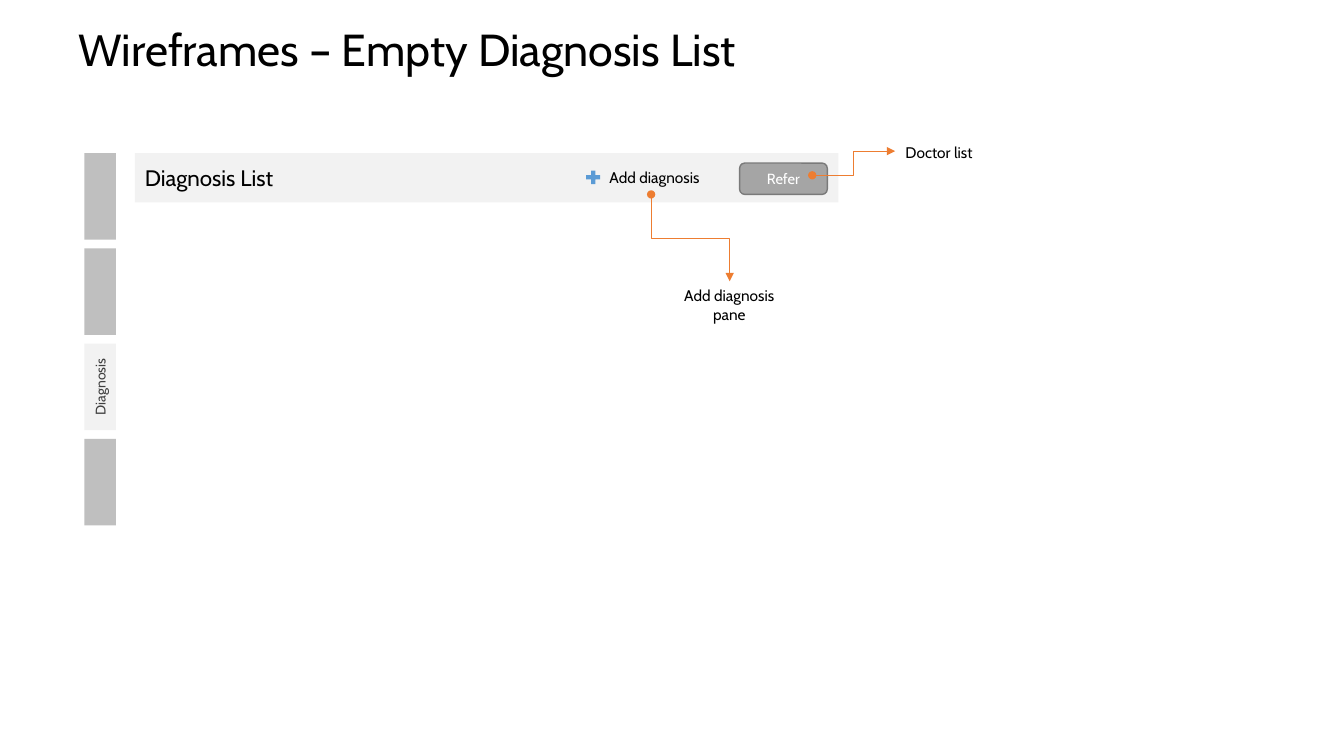
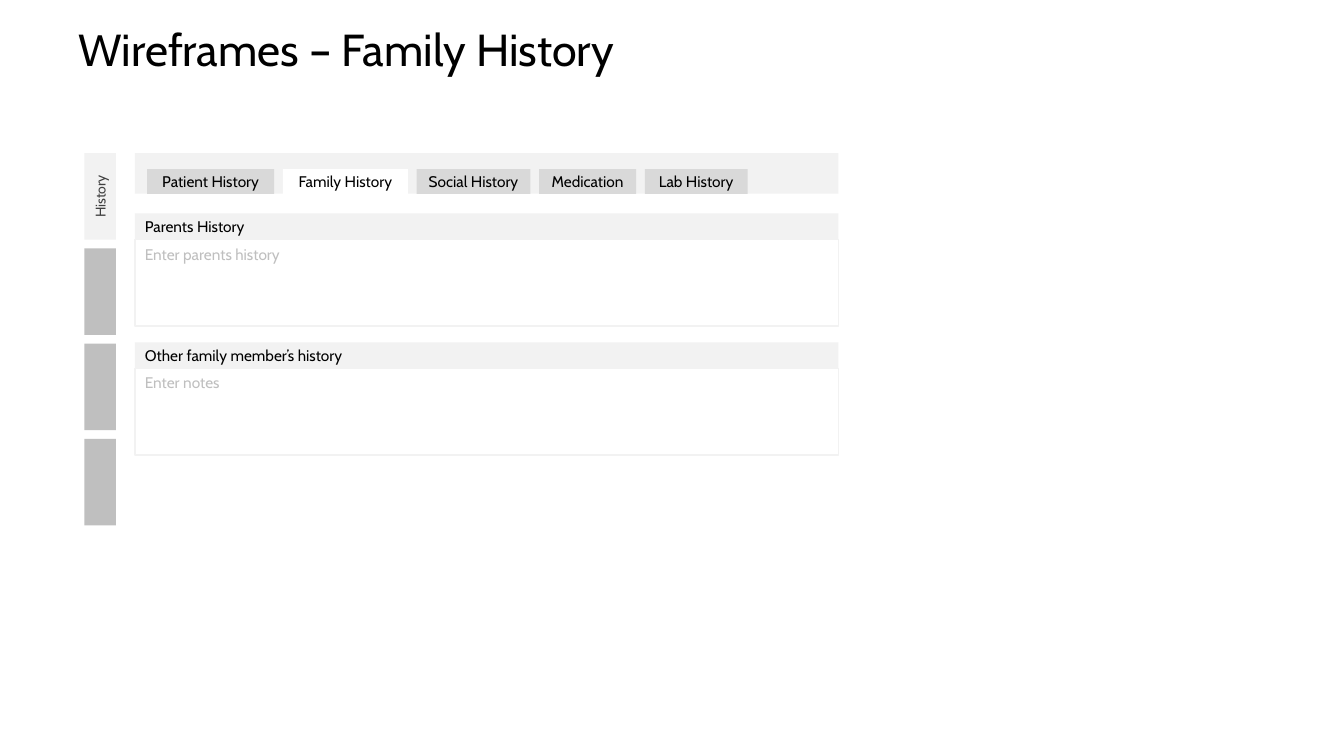
from dataclasses import dataclass
from typing import NamedTuple, Optional

from lxml import etree
from pptx import Presentation
from pptx.dml.color import RGBColor
from pptx.enum import shapes, text
from pptx.oxml import ns
from pptx.util import Cm, Pt

Kind = shapes.MSO_SHAPE
Align = text.PP_ALIGN
Anchor = text.MSO_ANCHOR


@dataclass(frozen=True)
class Theme:
    font: str = "Cabin"
    black: str = "000000"
    white: str = "FFFFFF"
    dark: str = "404040"
    edge: str = "7A7A7A"
    button: str = "A5A5A5"
    grey: str = "BFBFBF"
    tab: str = "D9D9D9"
    pale: str = "F2F2F2"
    blue: str = "5B9BD5"
    orange: str = "ED7D31"
    title: float = 32
    head: float = 16
    body: float = 11
    label: float = 10.5
    small: float = 10


class Box(NamedTuple):
    x: float
    y: float
    w: float
    h: float

    def cm(self) -> list:
        return [Cm(v) for v in self]


class Tab(NamedTuple):
    name: str
    width: float


class Panel(NamedTuple):
    name: str
    hint: str


THEME = Theme()
TITLE = Box(1.73, 0.43, 29.87, 2.46)
LEFT, TOP, WIDE = 3.4, 3.86, 17.73
RAIL = Box(2.13, TOP, 0.79, 2.18)
RAIL_STEP = 2.4
RAIL_COUNT = 4
TAB_GAP = 0.22
TABS = [
    Tab("Patient History", 3.2),
    Tab("Family History", 3.15),
    Tab("Social History", 2.87),
    Tab("Medication", 2.44),
    Tab("Lab History", 2.59),
]
PANEL_TOP, PANEL_STEP, HEAD, BODY = 5.38, 3.25, 0.66, 2.18
PANELS = [
    Panel("Parents History", "Enter parents history"),
    Panel("Other family member’s history", "Enter notes"),
]


def write(shape, words: str, *, size: float = THEME.body,
          color: str = THEME.black, align=Align.LEFT,
          anchor=Anchor.TOP, tight: bool = False) -> None:
    frame = shape.text_frame
    frame.word_wrap = True
    frame.vertical_anchor = anchor
    if tight:
        frame.margin_left = frame.margin_right = 0
    para = frame.paragraphs[0]
    para.alignment = align
    run = para.add_run()
    run.text = words
    run.font.name = THEME.font
    run.font.size = Pt(size)
    run.font.color.rgb = RGBColor.from_string(color)


def label(slide, box: Box, words: str, **style) -> None:
    write(slide.shapes.add_textbox(*box.cm()), words, **style)


def draw(slide, box: Box, fill: str, kind=Kind.RECTANGLE,
         line: Optional[str] = None):
    shape = slide.shapes.add_shape(kind, *box.cm())
    shape.shadow.inherit = False
    shape.fill.solid()
    shape.fill.fore_color.rgb = RGBColor.from_string(fill)
    if line:
        shape.line.color.rgb = RGBColor.from_string(line)
        shape.line.width = Pt(1)
    else:
        shape.line.fill.background()
    return shape


def link(slide, x1: float, y1: float, x2: float, y2: float,
         down: bool = False) -> None:
    ends = (x1, y1, x2, y2)
    if down:
        mx, my = (x1 + x2) / 2, (y1 + y2) / 2
        dx, dy = (x2 - x1) / 2, (y2 - y1) / 2
        ends = (mx + dy, my - dx, mx - dy, my + dx)
    wire = slide.shapes.add_connector(
        shapes.MSO_CONNECTOR.ELBOW, *[Cm(v) for v in ends])
    wire.line.color.rgb = RGBColor.from_string(THEME.orange)
    wire.line.width = Pt(0.5)
    props = wire.element.spPr
    if down:
        props.find(ns.qn("a:xfrm")).set("rot", "16200000")
    line = props.find(ns.qn("a:ln"))
    for tag, tip in (("a:headEnd", "oval"), ("a:tailEnd", "triangle")):
        etree.SubElement(line, ns.qn(tag)).set("type", tip)
    etree.SubElement(props, ns.qn("a:effectLst"))


def start(deck, title: str, name: str, spot: int):
    slide = deck.slides.add_slide(deck.slide_layouts[6])
    for i in range(RAIL_COUNT):
        box = RAIL._replace(y=RAIL.y + i * RAIL_STEP)
        if i != spot:
            draw(slide, box, THEME.grey)
            continue
        shift = (box.h - box.w) / 2
        flat = Box(box.x - shift, box.y + shift, box.h, box.w)
        mark = draw(slide, flat, THEME.pale)
        mark.rotation = 270
        write(mark, name, size=THEME.small, color=THEME.dark,
              align=Align.CENTER, anchor=Anchor.MIDDLE)
    label(slide, TITLE, title, size=THEME.title)
    return slide


def empty(deck) -> None:
    slide = start(deck, "Wireframes – Empty Diagnosis List", "Diagnosis", 2)
    draw(slide, Box(LEFT, TOP, WIDE, 1.24), THEME.pale)
    refer = draw(slide, Box(18.64, 4.11, 2.21, 0.79), THEME.button,
                 Kind.ROUNDED_RECTANGLE, THEME.edge)
    write(refer, "Refer", size=THEME.label, color=THEME.white,
          align=Align.CENTER, anchor=Anchor.MIDDLE)
    label(slide, Box(15.11, 4.11, 3.86, 0.74), "Add diagnosis")
    draw(slide, Box(14.71, 4.24, 0.48, 0.46), THEME.blue, Kind.MATH_PLUS)
    link(slide, 20.47, 4.42, 22.56, 3.81)
    label(slide, Box(22.4, 3.48, 2.62, 0.74), "Doctor list ",
          align=Align.CENTER)
    link(slide, 16.41, 4.9, 18.39, 7.09, down=True)
    label(slide, Box(16.74, 7.09, 3.28, 1.19), "Add diagnosis pane",
          align=Align.CENTER)
    label(slide, Box(LEFT, 4.01, 4.09, 0.94), "Diagnosis List",
          size=THEME.head)


def family(deck) -> None:
    slide = start(deck, "Wireframes – Family History", "History", 0)
    draw(slide, Box(LEFT, TOP, WIDE, 1.02), THEME.pale)
    x = 3.71
    for tab in TABS:
        fill = THEME.white if tab.name == "Family History" else THEME.tab
        shape = draw(slide, Box(x, 4.26, tab.width, 0.63), fill)
        write(shape, tab.name, align=Align.CENTER, anchor=Anchor.MIDDLE,
              tight=True)
        x += tab.width + TAB_GAP
    for i, panel in enumerate(PANELS):
        y = PANEL_TOP + i * PANEL_STEP
        body = draw(slide, Box(LEFT, y + HEAD, WIDE, BODY), THEME.white,
                    line=THEME.pale)
        write(body, panel.hint, color=THEME.grey)
        head = draw(slide, Box(LEFT, y, WIDE, HEAD), THEME.pale)
        write(head, panel.name, anchor=Anchor.MIDDLE)


def main() -> None:
    deck = Presentation()
    deck.slide_width, deck.slide_height = Cm(33.87), Cm(19.05)
    empty(deck)
    family(deck)
    deck.save("out.pptx")


if __name__ == "__main__":
    main()
